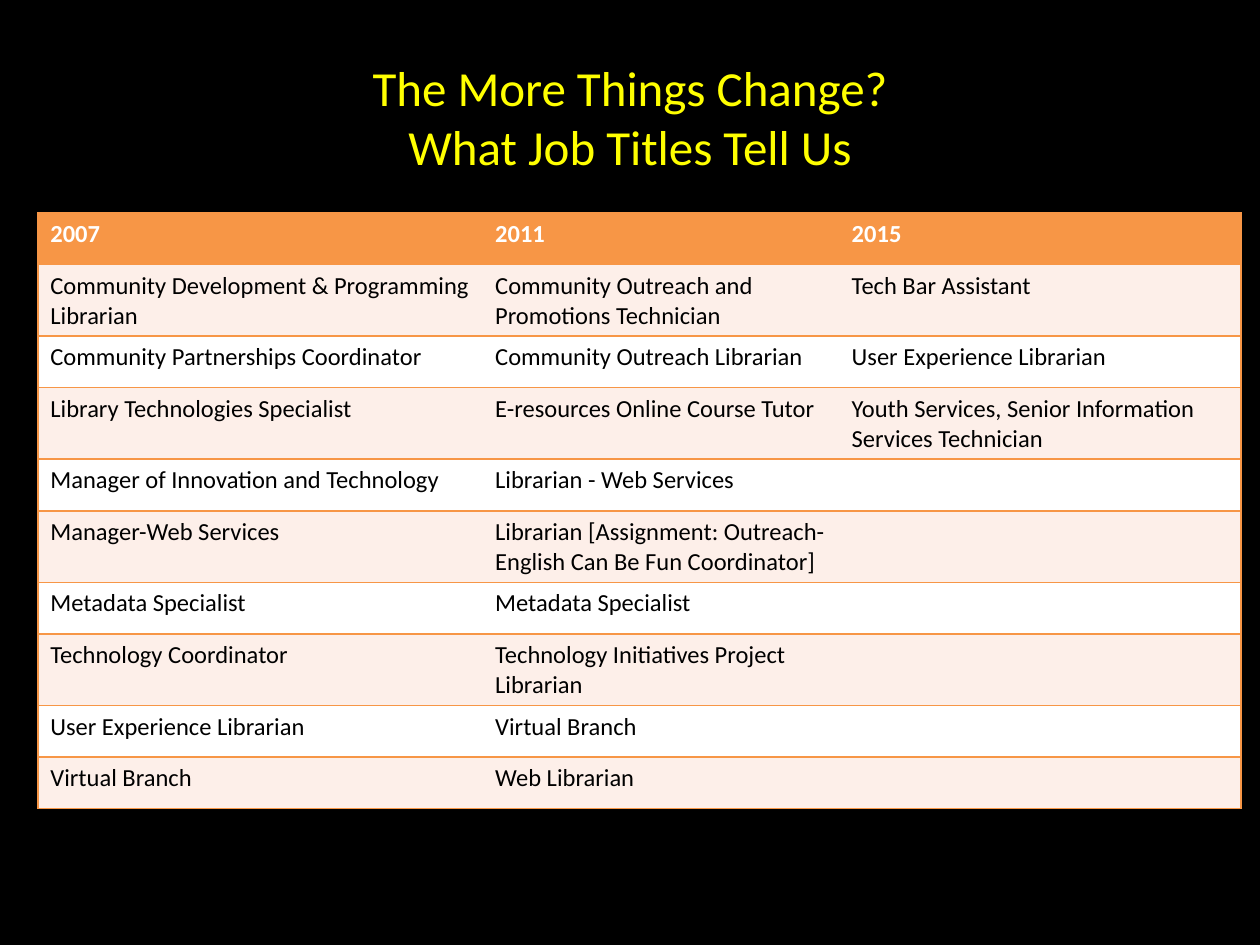
from lxml import etree
from pptx import Presentation
from pptx.dml.color import RGBColor
from pptx.enum.text import MSO_ANCHOR, PP_ALIGN
from pptx.oxml.ns import qn
from pptx.util import Inches, Pt

MIDDLE = MSO_ANCHOR.MIDDLE
CENTER = PP_ALIGN.CENTER

COLORS = {
    "back": "000000", "title": "FFFF00", "head": "F79646", "line": "F79646",
    "band": "FDEFE9", "plain": "FFFFFF", "light": "FFFFFF", "dark": "000000",
}
FORMATS = {
    "title": {"name": "Calibri", "size": Pt(28), "bold": False},
    "head": {"name": "Calibri", "size": Pt(14), "bold": True},
    "body": {"name": "Calibri", "size": Pt(14), "bold": False},
}
TITLE = "The More Things Change?\vWhat Job Titles Tell Us"
WIDTHS = [3.53, 2.83, 3.19]
ROW_HEIGHT = 0.41
# Job titles by year
JOBS = {
    "2007": [
        "Community Development & Programming Librarian",
        "Community Partnerships Coordinator",
        "Library Technologies Specialist",
        "Manager of Innovation and Technology",
        "Manager-Web Services",
        "Metadata Specialist",
        "Technology Coordinator",
        "User Experience Librarian",
        "Virtual Branch",
    ],
    "2011": [
        "Community Outreach and Promotions Technician",
        "Community Outreach Librarian",
        "E-resources Online Course Tutor",
        "Librarian - Web Services",
        "Librarian [Assignment: Outreach-English Can Be Fun Coordinator]",
        "Metadata Specialist",
        "Technology Initiatives Project Librarian",
        "Virtual Branch",
        "Web Librarian",
    ],
    "2015": [
        "Tech Bar Assistant",
        "User Experience Librarian",
        "Youth Services, Senior Information Services Technician",
    ],
}


def color(name):
    return RGBColor.from_string(COLORS[name])


def style(text, kind, shade):
    """Format every run of a paragraph."""
    for run in text.runs:
        for key, value in FORMATS[kind].items():
            setattr(run.font, key, value)
        run.font.color.rgb = color(shade)


def add_title(slide):
    box = slide.shapes.add_textbox(
        Inches(0.5), Inches(0.3), Inches(9), Inches(1.25))
    frame = box.text_frame
    frame.word_wrap = True
    frame.vertical_anchor = MIDDLE
    frame.text = TITLE
    frame.paragraphs[0].alignment = CENTER
    style(frame.paragraphs[0], "title", "title")


def set_borders(cell, sides):
    """Draw the named sides and clear the others; call before the fill."""
    props = cell._tc.get_or_add_tcPr()
    for side in "LRTB":
        line = etree.SubElement(props, qn(f"a:ln{side}"), w=str(Pt(1)))
        if side in sides:
            fill = etree.SubElement(line, qn("a:solidFill"))
            etree.SubElement(fill, qn("a:srgbClr"), val=COLORS["line"])
        else:
            etree.SubElement(line, qn("a:noFill"))


def fill_cell(cell, text, row, sides):
    set_borders(cell, sides)
    cell.fill.solid()
    shade = "head" if row == 0 else "band" if row % 2 else "plain"
    cell.fill.fore_color.rgb = color(shade)
    if text:
        cell.text = text
        kind, ink = ("head", "light") if row == 0 else ("body", "dark")
        style(cell.text_frame.paragraphs[0], kind, ink)


def add_jobs(slide):
    count = 1 + max(len(jobs) for jobs in JOBS.values())
    table = slide.shapes.add_table(
        count, len(JOBS), Inches(0.3), Inches(1.69),
        Inches(sum(WIDTHS)), Inches(count * ROW_HEIGHT)).table
    for row in table.rows:
        row.height = Inches(ROW_HEIGHT)
    for col, (year, jobs) in enumerate(JOBS.items()):
        table.columns[col].width = Inches(WIDTHS[col])
        # Outer sides only, plus a rule between rows
        sides = "TB" + {0: "L", len(JOBS) - 1: "R"}.get(col, "")
        texts = [year] + jobs
        for row in range(count):
            text = texts[row] if row < len(texts) else ""
            fill_cell(table.cell(row, col), text, row, sides)


def main():
    deck = Presentation()
    deck.slide_width, deck.slide_height = Inches(10), Inches(7.5)
    slide = deck.slides.add_slide(deck.slide_layouts[6])
    slide.background.fill.solid()
    slide.background.fill.fore_color.rgb = color("back")
    add_title(slide)
    add_jobs(slide)
    deck.save("out.pptx")


if __name__ == "__main__":
    main()
